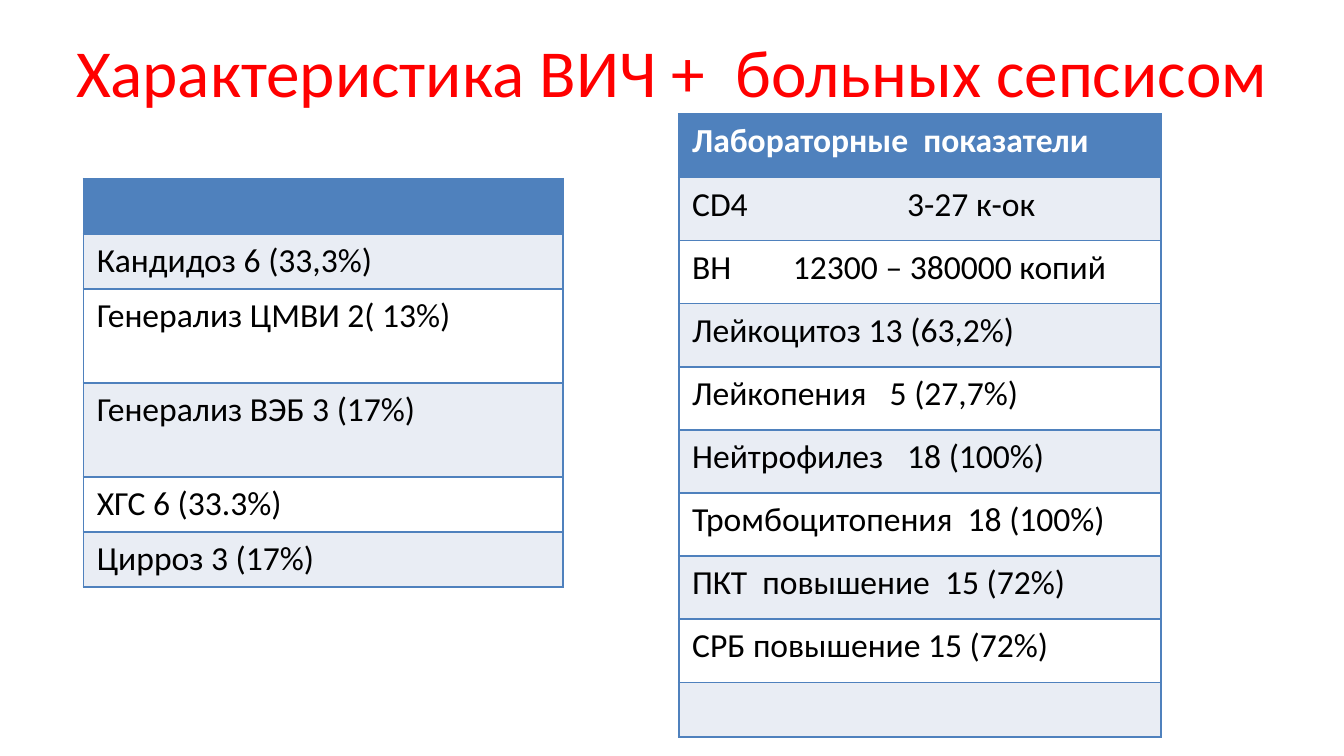
"""Build a slide with two tables describing HIV-positive sepsis patients."""
from dataclasses import dataclass

from lxml.etree import SubElement
from pptx import Presentation
from pptx.dml.color import RGBColor
from pptx.enum.text import MSO_ANCHOR, PP_ALIGN
from pptx.oxml.ns import qn
from pptx.util import Inches, Pt

BLUE, PALE, WHITE, BLACK, RED = "4F81BD", "E9EDF4", "FFFFFF", "000000", "FF0000"
PLAIN_TABLE = "{2D5ABB26-0587-4C30-8999-92F81FD0307C}"


@dataclass
class Row:
    height: float
    text: str = ""
    tab: float = 0


@dataclass
class TableSpec:
    left: float
    top: float
    columns: tuple[float, float]
    rows: list[Row]


TABLES = [
    TableSpec(0.62, 1.33, (3.33, 0.23), [
        Row(0.41),
        Row(0.41, "Кандидоз 6 (33,3%)"),
        Row(0.7, "Генерализ ЦМВИ 2( 13%)"),
        Row(0.7, "Генерализ ВЭБ 3 (17%)"),
        Row(0.41, "ХГС 6 (33.3%)"),
        Row(0.41, "Цирроз 3 (17%)"),
    ]),
    TableSpec(5.05, 0.85, (3.33, 0.26), [
        Row(0.47, "Лабораторные  показатели"),
        Row(0.47, "CD4\t3-27 к-ок", 1.6),
        Row(0.47, "ВН\t12300 – 380000 копий", 0.75),
        Row(0.47, "Лейкоцитоз 13 (63,2%)"),
        Row(0.47, "Лейкопения\t5 (27,7%)", 1.47),
        Row(0.47, "Нейтрофилез\t18 (100%)", 1.6),
        Row(0.47, "Тромбоцитопения  18 (100%)"),
        Row(0.47, "ПКТ  повышение  15 (72%)"),
        Row(0.47, "СРБ повышение 15 (72%)"),
        Row(0.35),
    ]),
]


def rgb(value: str) -> RGBColor:
    return RGBColor.from_string(value)


def write(para, text: str, *, size: float = 18, color: str = BLACK,
          bold: bool = False, align=PP_ALIGN.LEFT, tab: float = 0) -> None:
    para.alignment = align
    span = para.add_run()
    span.text = text
    span.font.name = "Calibri"
    span.font.size = Pt(size)
    span.font.bold = bold
    span.font.color.rgb = rgb(color)
    if tab:
        stops = SubElement(para._p.get_or_add_pPr(), qn("a:tabLst"))
        SubElement(stops, qn("a:tab"), pos=str(Inches(tab)), algn="l")


def add_borders(cell, sides: str) -> None:
    properties = cell._tc.get_or_add_tcPr()
    for side in sides:
        line = SubElement(properties, qn(f"a:ln{side}"), w=str(Pt(1)))
        fill = SubElement(line, qn("a:solidFill"))
        SubElement(fill, qn("a:srgbClr"), val=BLUE)


def draw_table(page, spec: TableSpec) -> None:
    frame = page.shapes.add_table(
        len(spec.rows), len(spec.columns), Inches(spec.left), Inches(spec.top),
        Inches(sum(spec.columns)), Inches(sum(row.height for row in spec.rows)))
    table = frame.table
    table.horz_banding = False
    table._tbl.tblPr.find(qn("a:tableStyleId")).text = PLAIN_TABLE
    for column, width in zip(table.columns, spec.columns):
        column.width = Inches(width)
    for index, row in enumerate(spec.rows):
        table.rows[index].height = Inches(row.height)
        header = index == 0
        shade = BLUE if header else (WHITE, PALE)[index % 2]
        for cell, sides in zip(table.rows[index].cells, ("LTB", "RTB")):
            add_borders(cell, sides)
            cell.fill.solid()
            cell.fill.fore_color.rgb = rgb(shade)
        if row.text:
            write(table.cell(index, 0).text_frame.paragraphs[0], row.text,
                  color=WHITE if header else BLACK, bold=header, tab=row.tab)


def draw_title(page, text: str) -> None:
    title = page.shapes.title
    title.left, title.top = Inches(0), Inches(0.21)
    title.width, title.height = Inches(10), Inches(0.63)
    title.text_frame.vertical_anchor = MSO_ANCHOR.MIDDLE
    write(title.text_frame.paragraphs[0], text, size=36, color=RED,
          align=PP_ALIGN.CENTER)


def main() -> None:
    deck = Presentation()
    deck.slide_width = Inches(10)
    deck.slide_height = deck.slide_width * 9 // 16
    page = deck.slides.add_slide(deck.slide_layouts[5])
    draw_title(page, "Характеристика ВИЧ +  больных сепсисом")
    for spec in TABLES:
        draw_table(page, spec)
    deck.save("out.pptx")


if __name__ == "__main__":
    main()
